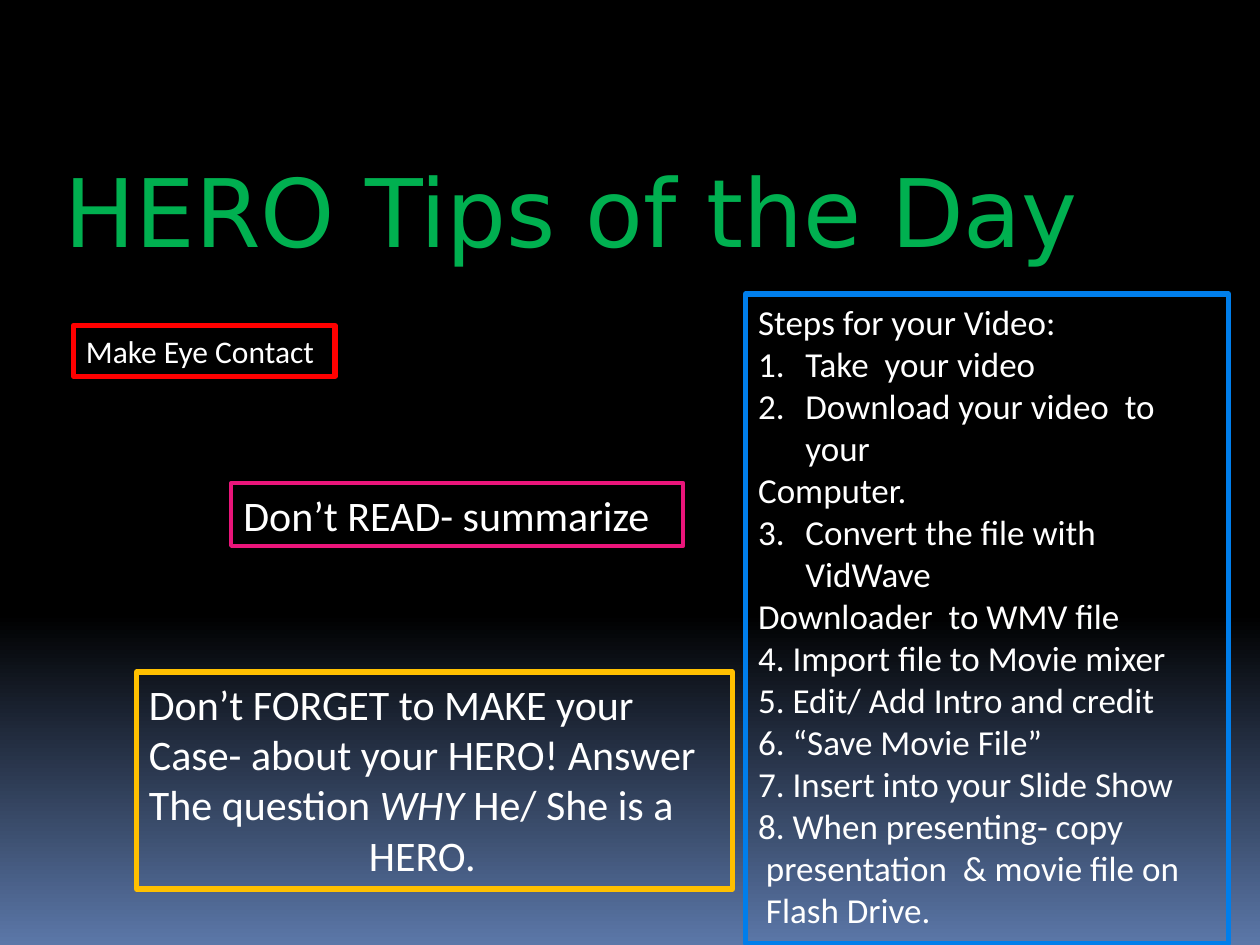
from dataclasses import dataclass

from lxml.etree import SubElement
from pptx import Presentation
from pptx.dml.color import RGBColor
from pptx.enum.text import MSO_ANCHOR, MSO_AUTO_SIZE, PP_ALIGN
from pptx.oxml.ns import qn
from pptx.util import Pt


@dataclass(frozen=True)
class Theme:
    black: str = "000000"
    horizon: str = "5B77A8"
    text: str = "FFFFFF"
    green: str = "00B050"
    red: str = "FF0000"
    blue: str = "007EEB"
    pink: str = "EA157A"
    amber: str = "FFC000"
    title_font: str = "DejaVu Sans"
    body_font: str = "Calibri"
    title_size: float = 54
    large_size: float = 24
    list_size: float = 20
    small_size: float = 18
    hanging: float = 27
    space_width: float = 4.5


def write_text(para, text, *, size, color, font, italic=False):
    span = para.add_run()
    span.text = text
    span.font.size = Pt(size)
    span.font.name = font
    span.font.italic = italic
    span.font.color.rgb = RGBColor.from_string(color)


class SlideBuilder:
    def __init__(self, slide, theme):
        self.slide = slide
        self.theme = theme

    def background(self):
        fill = self.slide.background.fill
        fill.gradient()
        fill.gradient_angle = 270
        stops = ((0.65, self.theme.black), (1, self.theme.horizon))
        for stop, (position, color) in zip(fill.gradient_stops, stops):
            stop.position = position
            stop.color.rgb = RGBColor.from_string(color)

    def place(self, box, bounds, wrap=True, auto_size=MSO_AUTO_SIZE.NONE):
        box.left, box.top, box.width, box.height = map(Pt, bounds)
        frame = box.text_frame
        frame.word_wrap = wrap
        frame.auto_size = auto_size
        frame.vertical_anchor = MSO_ANCHOR.TOP
        return frame

    def outline(self, box, color, width):
        box.line.color.rgb = RGBColor.from_string(color)
        box.line.width = Pt(width)

    def title(self, text, bounds):
        para = self.place(self.slide.shapes.title, bounds).paragraphs[0]
        para.alignment = PP_ALIGN.CENTER
        write_text(para, text, size=self.theme.title_size,
                   color=self.theme.green, font=self.theme.title_font)

    def tip(self, lines, bounds, color, size, width=3):
        box = self.slide.shapes.add_textbox(*map(Pt, bounds))
        frame = self.place(box, bounds, wrap=False,
                           auto_size=MSO_AUTO_SIZE.SHAPE_TO_FIT_TEXT)
        self.outline(box, color, width)
        for index, (alignment, spans) in enumerate(lines):
            para = frame.add_paragraph() if index else frame.paragraphs[0]
            para.alignment = alignment
            for text, italic in spans:
                write_text(para, text, size=size, color=self.theme.text,
                           font=self.theme.body_font, italic=italic)

    def steps(self, items, bounds, color):
        box = self.slide.placeholders[1]
        frame = self.place(box, bounds)
        self.outline(box, color, 3)
        for index, (text, margin, indent, start) in enumerate(items):
            para = frame.add_paragraph() if index else frame.paragraphs[0]
            para.space_before = Pt(0)
            properties = para._p.get_or_add_pPr()
            properties.set("marL", str(Pt(margin)))
            properties.set("indent", str(Pt(indent)))
            if start:
                bullet = SubElement(properties, qn("a:buAutoNum"), type="arabicPeriod")
                if start > 1:
                    bullet.set("startAt", str(start))
            else:
                SubElement(properties, qn("a:buNone"))
            write_text(para, text, size=self.theme.list_size,
                       color=self.theme.text, font=self.theme.body_font)


def main():
    theme = Theme()
    deck = Presentation()
    deck.slide_width, deck.slide_height = Pt(720), Pt(540)
    page = SlideBuilder(deck.slides.add_slide(deck.slide_layouts[1]), theme)
    page.background()
    page.title("HERO Tips of the Day", (24, 84, 605.5, 73))

    plain = (0, 0, None)
    hanging = (theme.hanging, -theme.hanging)
    continued = (theme.space_width, 0, None)
    page.steps([
        ("Steps for your Video:", *plain),
        ("Take  your video", *hanging, 1),
        ("Download your video  to your", *hanging, 1),
        ("Computer.", *hanging, None),
        ("Convert the file with VidWave", *hanging, 3),
        ("Downloader  to WMV file", *hanging, None),
        ("4. Import file to Movie mixer", *hanging, None),
        ("5. Edit/ Add Intro and credit", *hanging, None),
        ("6. “Save Movie File”", *hanging, None),
        ("7. Insert into your Slide Show", *hanging, None),
        ("8. When presenting- copy", *hanging, None),
        ("presentation  & movie file on", *continued),
        ("Flash Drive.", *continued),
    ], (426, 168, 276, 371), theme.blue)

    left, center = PP_ALIGN.LEFT, PP_ALIGN.CENTER
    page.tip([(left, [("Make Eye Contact", False)])],
             (42, 186, 149.5, 29), theme.red, theme.small_size)
    page.tip([(left, [("Don’t READ- summarize", False)])],
             (132, 276, 258.5, 36), theme.pink, theme.large_size, width=2.25)
    page.tip([
        (left, [("Don’t FORGET to MAKE your", False)]),
        (left, [("Case- about your HERO! Answer", False)]),
        (left, [("The question ", False), ("WHY", True), (" He/ She is a", False)]),
        (center, [("HERO.", False)]),
    ], (78, 384, 340.5, 124), theme.amber, theme.large_size)
    deck.save("out.pptx")


if __name__ == "__main__":
    main()
